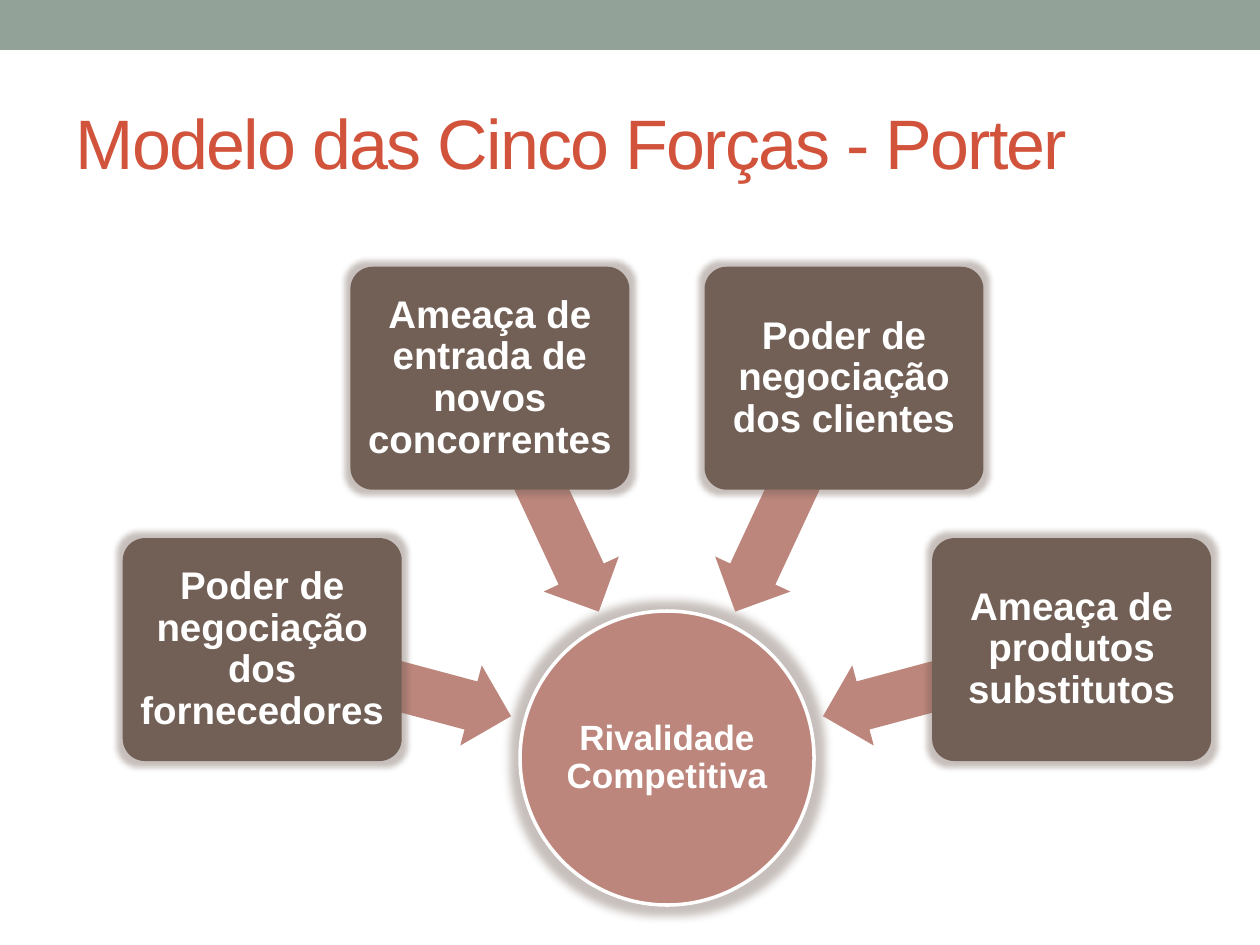
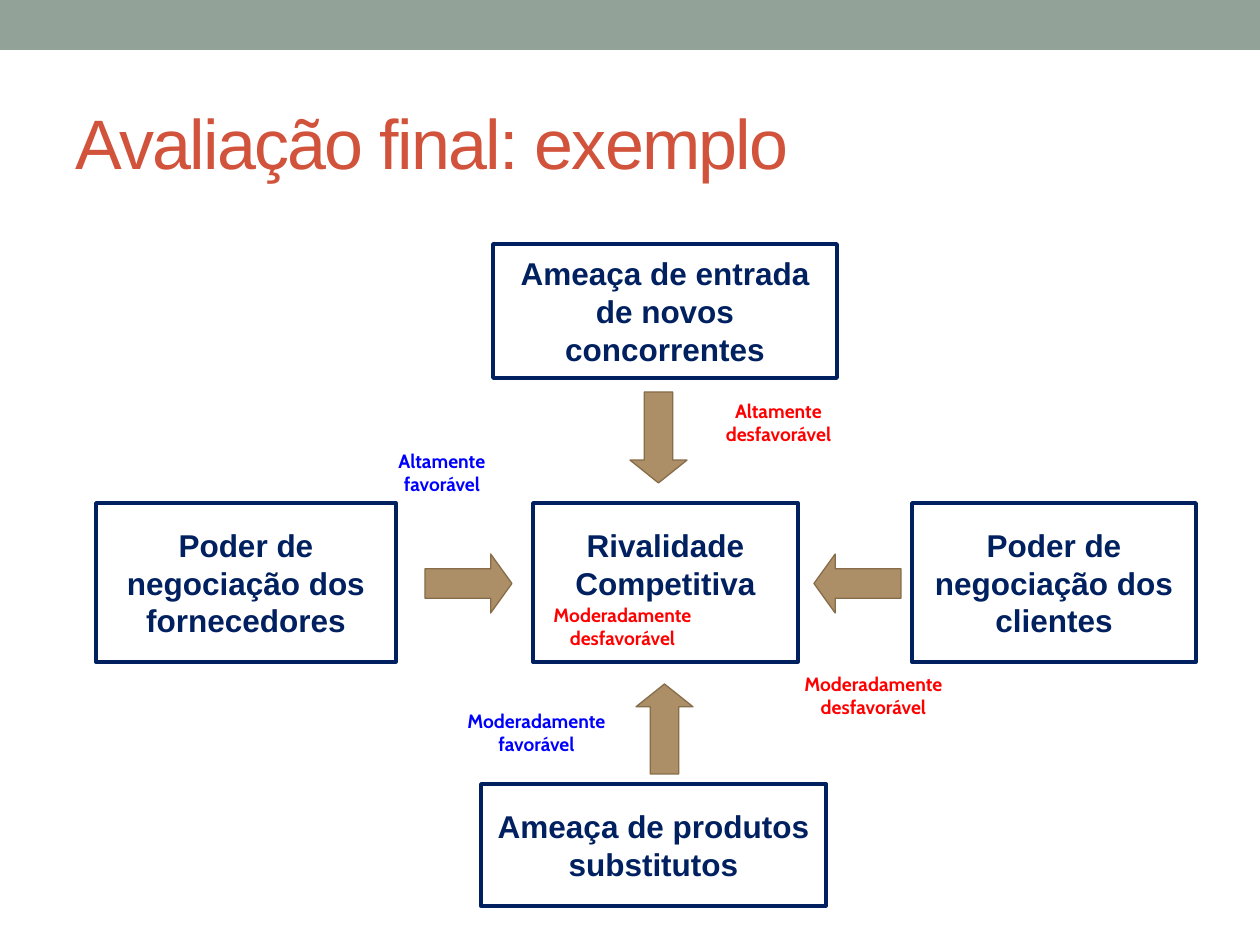
from math import cos, radians, sin

from lxml.etree import SubElement
from pptx import Presentation
from pptx.dml.color import RGBColor
from pptx.enum.shapes import MSO_SHAPE
from pptx.enum.text import MSO_ANCHOR, MSO_AUTO_SIZE, PP_ALIGN
from pptx.oxml.ns import qn
from pptx.util import Emu, Pt

SCALE = 914400 / 126
WIDE, HIGH = 1260, 945
COLORS = {
    "band": "93A299", "title": "D2533C", "white": "FFFFFF",
    "rose": "BD867C", "brown": "726056", "navy": "002060",
    "tan": "AD8F67", "edge": "866C49", "bad": "FF0000", "good": "0000FF",
}
HUB = (667, 758)
ARROW_GAP, BOX_GAP = 290, 419
FORCES = [
    (195, "Poder de negociação dos fornecedores"),
    (245, "Ameaça de entrada de novos concorrentes"),
    (295, "Poder de negociação dos clientes"),
    (345, "Ameaça de produtos substitutos"),
]
ROW_TOP, ROW_HIGH = 503, 159
BOXES = [
    (96, ROW_TOP, 300, ROW_HIGH, "Poder de negociação dos fornecedores"),
    (493, 244, 344, 134, "Ameaça de entrada de novos concorrentes"),
    (912, ROW_TOP, 284, ROW_HIGH, "Poder de negociação dos clientes"),
    (481, 784, 345, 122, "Ameaça de produtos substitutos"),
]
ARROWS = [
    (MSO_SHAPE.DOWN_ARROW, 630, 392, 57, 91, 0.4),
    (MSO_SHAPE.UP_ARROW, 636, 684, 57, 90, 0.4),
    (MSO_SHAPE.LEFT_ARROW, 814, 554, 87, 59, 0.36),
    (MSO_SHAPE.RIGHT_ARROW, 425, 554, 87, 59, 0.36),
]
LABELS = [
    (684, 393, 189, "Altamente desfavorável", "bad"),
    (373, 443, 138, "Altamente favorável", "good"),
    (784, 666, 179, "Moderadamente desfavorável", "bad"),
    (442, 703, 189, "Moderadamente favorável", "good"),
    (533, 597, 179, "Moderadamente desfavorável", "bad"),
]


def px(count):
    return Emu(round(count * SCALE))


def rgb(name):
    return RGBColor.from_string(COLORS[name])


def write(shape, text, size, color, font="Arial", bold=True,
          align=PP_ALIGN.CENTER, anchor=MSO_ANCHOR.MIDDLE):
    frame = shape.text_frame
    frame.text = text
    frame.word_wrap = True
    frame.auto_size = MSO_AUTO_SIZE.NONE
    frame.vertical_anchor = anchor
    para = frame.paragraphs[0]
    para.alignment = align
    run = para.runs[0]
    run.font.name = font
    run.font.size = Pt(size)
    run.font.bold = bold
    run.font.color.rgb = rgb(color)
    return para


def add_shape(slide, kind, x, y, w, h, fill=None, line=None, weight=2):
    shape = slide.shapes.add_shape(kind, px(x), px(y), px(w), px(h))
    shape.shadow.inherit = False
    if fill:
        shape.fill.solid()
        shape.fill.fore_color.rgb = rgb(fill)
    else:
        shape.fill.background()
    if line:
        shape.line.color.rgb = rgb(line)
        shape.line.width = Pt(weight)
    else:
        shape.line.fill.background()
    return shape


def add_glow(shape, size):
    effects = shape._element.spPr.find(qn("a:effectLst"))
    glow = SubElement(effects, qn("a:glow"), rad=str(px(size)))
    color = SubElement(glow, qn("a:srgbClr"), val=COLORS["brown"])
    SubElement(color, qn("a:alpha"), val="40000")


def set_text(shape, text, size, margin):
    """Write tight white text with equal margins."""
    write(shape, text, size, "white").line_spacing = 0.9
    frame = shape.text_frame
    frame.margin_left = frame.margin_right = px(margin)
    frame.margin_top = frame.margin_bottom = px(margin)


def add_slide(deck, text):
    """Add a slide with the top band and the title."""
    slide = deck.slides.add_slide(deck.slide_layouts[5])
    add_shape(slide, MSO_SHAPE.RECTANGLE, 0, 0, WIDE, 50, "band")
    title = slide.shapes.title
    title.left, title.top = px(63), px(73)
    title.width, title.height = px(1134), px(136)
    para = write(title, text, 40, "title", bold=False, align=PP_ALIGN.LEFT)
    para.runs[0].font._element.set("spc", "-100")
    return slide


def add_force(slide, angle, text):
    """Place a box and its inward arrow on a ray from the hub."""
    def spot(gap, w, h):
        turn = radians(angle)
        x, y = HUB[0] + gap * cos(turn), HUB[1] + gap * sin(turn)
        return x - w / 2, y - h / 2, w, h

    arrow = add_shape(slide, MSO_SHAPE.LEFT_ARROW,
                      *spot(ARROW_GAP, 257, 83), "rose")
    arrow.adjustments[0] = 0.6
    arrow.rotation = angle
    box = add_shape(slide, MSO_SHAPE.ROUNDED_RECTANGLE,
                    *spot(BOX_GAP, 279, 223), "brown")
    box.adjustments[0] = 0.1
    add_glow(box, 11)
    set_text(box, text, 22, 6)


def add_box(slide, x, y, w, h, text):
    box = add_shape(slide, MSO_SHAPE.RECTANGLE, x, y, w, h, line="navy")
    write(box, text, 18, "navy")
    return box


def add_arrow(slide, kind, x, y, w, h, head):
    arrow = add_shape(slide, kind, x, y, w, h, "tan", "edge", 0.75)
    arrow.adjustments[1] = head


def add_label(slide, x, y, w, text, color):
    label = slide.shapes.add_textbox(px(x), px(y), px(w), px(54))
    write(label, text, 11, color, "Cabin", anchor=MSO_ANCHOR.TOP)


def draw_model(deck):
    slide = add_slide(deck, "Modelo das Cinco Forças - Porter")
    size = 294
    hub = add_shape(slide, MSO_SHAPE.OVAL, HUB[0] - size / 2,
                    HUB[1] - size / 2, size, size, "rose", "white")
    add_glow(hub, 18)
    set_text(hub, "Rivalidade Competitiva", 20, 1)
    for force in FORCES:
        add_force(slide, *force)


def draw_sample(deck):
    slide = add_slide(deck, "Avaliação final: exemplo")
    for box in BOXES:
        add_box(slide, *box)
    core = add_box(slide, 533, ROW_TOP, 265, ROW_HIGH,
                   "Rivalidade Competitiva")
    core.text_frame.margin_bottom = px(44)
    for arrow in ARROWS:
        add_arrow(slide, *arrow)
    for label in LABELS:
        add_label(slide, *label)


def main():
    deck = Presentation()
    deck.slide_width, deck.slide_height = px(WIDE), px(HIGH)
    draw_model(deck)
    draw_sample(deck)
    deck.save("out.pptx")


if __name__ == "__main__":
    main()
